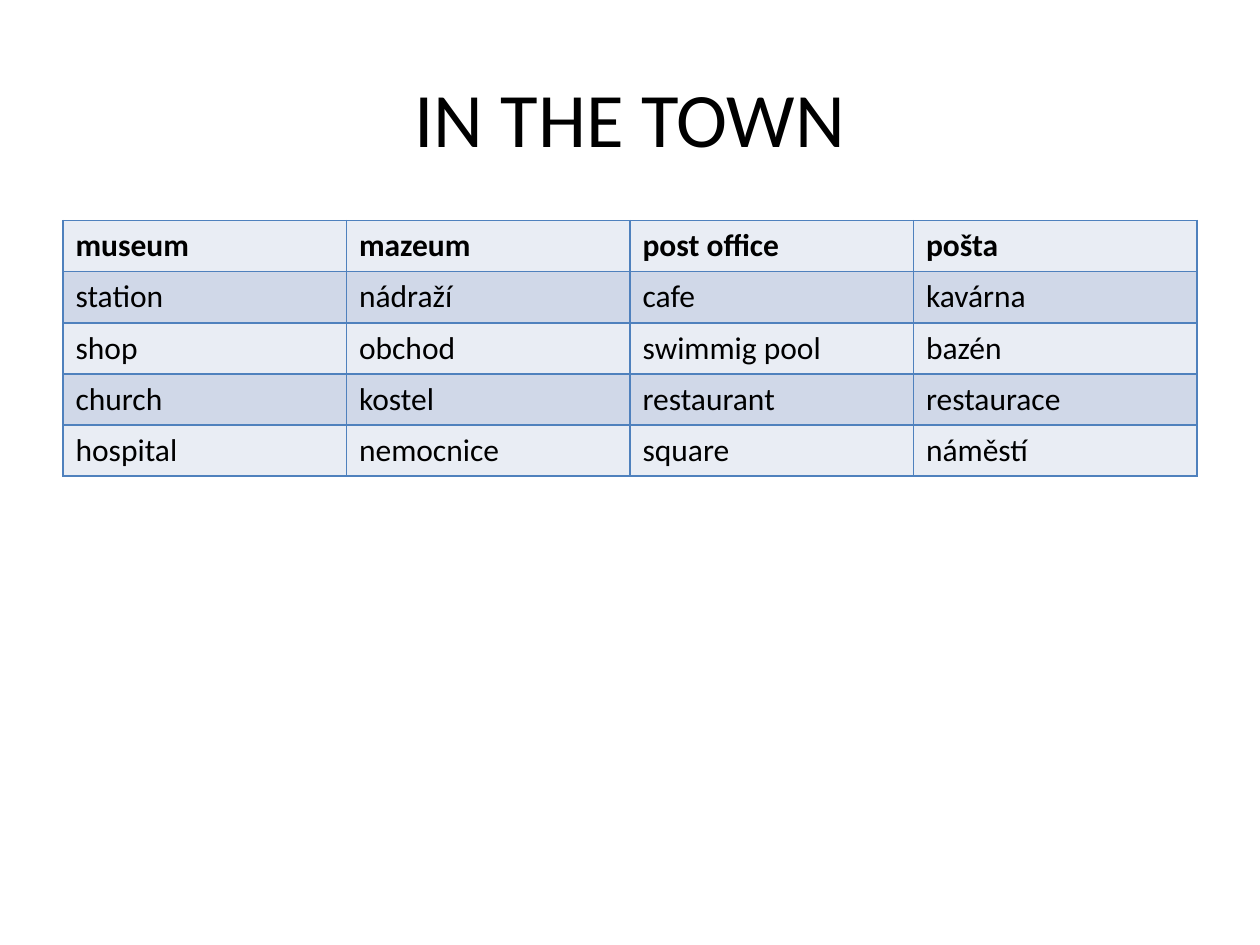
from lxml.etree import SubElement
from pptx import Presentation
from pptx.dml.color import RGBColor
from pptx.enum.text import MSO_ANCHOR, PP_ALIGN
from pptx.oxml.ns import qn
from pptx.util import Inches, Pt

TITLE = "IN THE TOWN"
WORDS = [
    ("museum", "mazeum", "post office", "pošta"),
    ("station", "nádraží", "cafe", "kavárna"),
    ("shop", "obchod", "swimmig pool", "bazén"),
    ("church", "kostel", "restaurant", "restaurace"),
    ("hospital", "nemocnice", "square", "náměstí"),
]
FONT = "Calibri"
TEXT = "000000"
BORDER = "4F81BD"
BANDS = ("E9EDF4", "D0D8E8")
LEFT, WIDTH = 0.5, 9
TABLE_TOP, TABLE_HEIGHT = 1.75, 2.03


def color(value):
    return RGBColor.from_string(value)


def add_span(para, text, size, bold=False):
    span = para.add_run()
    span.text = text
    span.font.name = FONT
    span.font.size = Pt(size)
    span.font.bold = bold
    span.font.color.rgb = color(TEXT)


def add_borders(cell):
    """Draw all four sides; call before setting the fill, which must follow in the XML."""
    properties = cell._tc.get_or_add_tcPr()
    for side in ("a:lnL", "a:lnR", "a:lnT", "a:lnB"):
        line = SubElement(properties, qn(side), w=str(Pt(1)))
        fill = SubElement(line, qn("a:solidFill"))
        SubElement(fill, qn("a:srgbClr"), val=BORDER)


def add_title(page):
    box = page.shapes.add_textbox(Inches(LEFT), Inches(0.3), Inches(WIDTH), Inches(1.25))
    frame = box.text_frame
    frame.word_wrap = True
    frame.vertical_anchor = MSO_ANCHOR.MIDDLE
    para = frame.paragraphs[0]
    para.alignment = PP_ALIGN.CENTER
    add_span(para, TITLE, 44)


def add_word_table(page):
    table = page.shapes.add_table(
        len(WORDS), len(WORDS[0]),
        Inches(LEFT), Inches(TABLE_TOP), Inches(WIDTH), Inches(TABLE_HEIGHT),
    ).table
    for row, words in enumerate(WORDS):
        for column, word in enumerate(words):
            cell = table.cell(row, column)
            add_borders(cell)
            cell.fill.solid()
            cell.fill.fore_color.rgb = color(BANDS[row % 2])
            add_span(cell.text_frame.paragraphs[0], word, 18, bold=row == 0)


def main():
    deck = Presentation()
    deck.slide_width, deck.slide_height = Inches(10), Inches(7.5)
    page = deck.slides.add_slide(deck.slide_layouts[6])
    add_title(page)
    add_word_table(page)
    deck.save("out.pptx")


if __name__ == "__main__":
    main()
